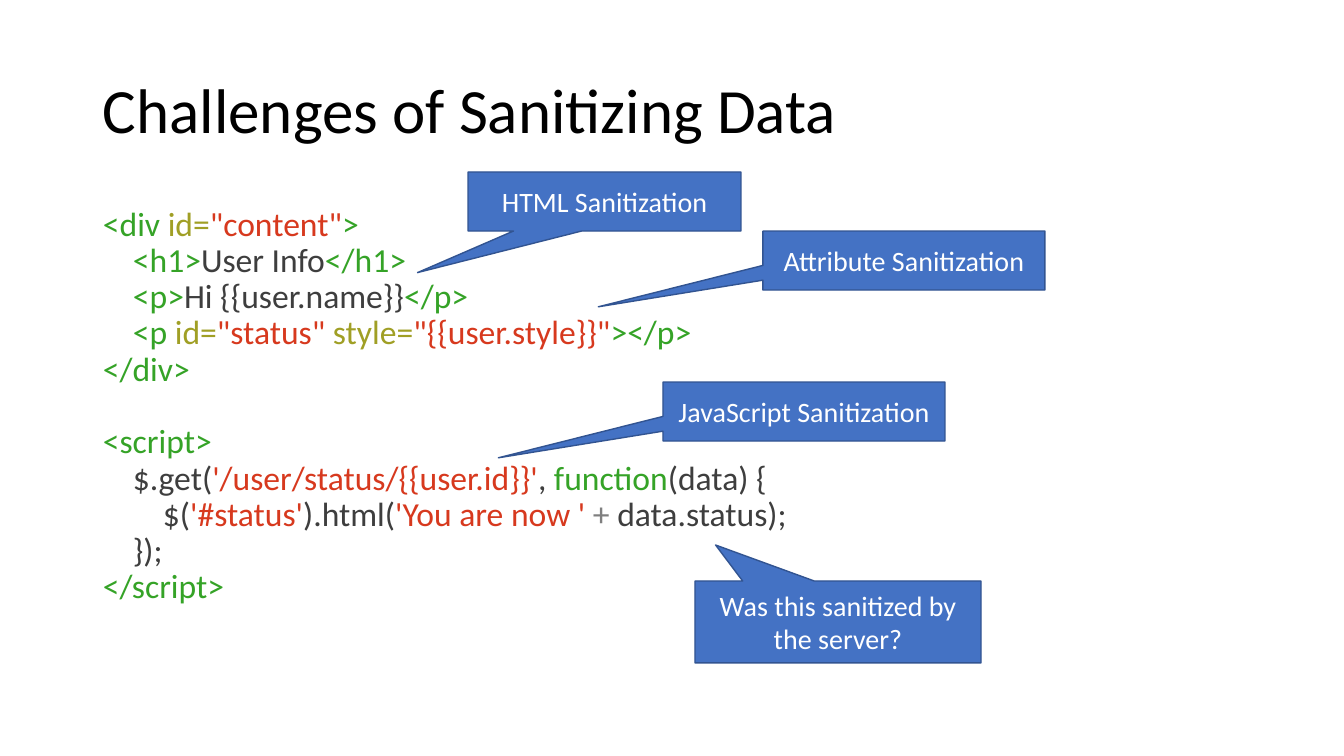
from pptx import Presentation
from pptx import util as u
from pptx.dml.color import RGBColor
from pptx.enum import shapes, text

PX = 914400 / 100.8
FONT = "Calibri"
BLACK, WHITE, BLUE, NAVY = "000000", "FFFFFF", "4472C4", "325491"
TAG, ATTR, STR, CODE, OP = "35A327", "A09F25", "D7391E", "3E3E3E", "7F7F7F"
INDENT = 30
LINE_GAP = 26

MARKUP = [
    (0, [("<div ", TAG), ("id=", ATTR), ('"content"', STR), (">", TAG)]),
    (1, [("<h1>", TAG), ("User Info", CODE), ("</h1>", TAG)]),
    (1, [("<p>", TAG), ("Hi {{user.name}}", CODE), ("</p>", TAG)]),
    (1, [("<p ", TAG), ("id=", ATTR), ('"status" ', STR), ("style=", ATTR),
         ('"{{user.style}}"', STR), ("></p>", TAG)]),
    (0, [("</div>", TAG)]),
]
SCRIPT = [
    (0, [("<script>", TAG)]),
    (1, [("$.get(", CODE), ("'/user/status/{{user.id}}'", STR), (", ", CODE),
         ("function", TAG), ("(data) {", CODE)]),
    (2, [("$(", CODE), ("'#status'", STR), (").html(", CODE),
         ("'You are now ' ", STR), ("+ ", OP), ("data.status);", CODE)]),
    (1, [("});", CODE)]),
    (0, [("</script>", TAG)]),
]
CALLOUTS = [
    ("HTML Sanitization", (468, 172, 273, 59), (-0.685, 1.205)),
    ("Attribute Sanitization", (763, 231, 282, 59), (-1.084, 0.785)),
    ("JavaScript Sanitization", (663, 382, 282, 59), (-1.084, 0.785)),
    ("Was this sanitized by the server?", (695, 581, 286, 82), (-0.428, -0.939)),
]


def px(n):
    """Turn pixels into EMU."""
    return u.Emu(round(n * PX))


def color(value):
    """Turn a hex string into a colour."""
    return RGBColor.from_string(value)


def add_run(p, words, size=24, fill=BLACK):
    """Add formatted text to a paragraph."""
    r = p.add_run()
    r.text = words
    r.font.name = FONT
    r.font.size = u.Pt(size)
    r.font.color.rgb = color(fill)


def add_box(s, box, anchor=text.MSO_ANCHOR.TOP):
    """Add a wrapping text box and return its text frame."""
    tf = s.shapes.add_textbox(*map(px, box)).text_frame
    tf.word_wrap = True
    tf.vertical_anchor = anchor
    return tf


def add_title(s, words, box):
    """Add the slide title."""
    p = add_box(s, box, text.MSO_ANCHOR.MIDDLE).paragraphs[0]
    p.line_spacing = 0.9
    add_run(p, words, size=45)


def add_code(s, blocks, box):
    """Add blocks of coloured code, one line apart."""
    tf = add_box(s, box)
    p = tf.paragraphs[0]
    for b, block in enumerate(blocks):
        for n, (depth, parts) in enumerate(block):
            if b or n:
                p = tf.add_paragraph()
            p.line_spacing = 0.9
            p.space_before = u.Pt(LINE_GAP if b and not n else 0)
            p._p.get_or_add_pPr().set("marL", str(px(depth * INDENT)))
            for words, fill in parts:
                add_run(p, words, fill=fill)


def add_callout(s, words, box, tip):
    """Add a rectangular callout whose tip is relative to its centre."""
    sp = s.shapes.add_shape(shapes.MSO_SHAPE.RECTANGULAR_CALLOUT, *map(px, box))
    sp.adjustments[0], sp.adjustments[1] = tip
    sp.shadow.inherit = False
    sp.fill.solid()
    sp.fill.fore_color.rgb = color(BLUE)
    sp.line.color.rgb = color(NAVY)
    sp.line.width = u.Pt(1)
    tf = sp.text_frame
    tf.word_wrap = True
    tf.vertical_anchor = text.MSO_ANCHOR.MIDDLE
    p = tf.paragraphs[0]
    p.alignment = text.PP_ALIGN.CENTER
    add_run(p, words, size=20, fill=WHITE)


def main():
    """Build and save the slide."""
    prs = Presentation()
    prs.slide_width, prs.slide_height = px(1344), px(756)
    s = prs.slides.add_slide(prs.slide_layouts[6])
    add_title(s, "Challenges of Sanitizing Data", (93, 40, 1159, 146))
    add_code(s, [MARKUP, SCRIPT], (93, 202, 1159, 480))
    for callout in CALLOUTS:
        add_callout(s, *callout)
    prs.save("out.pptx")


if __name__ == "__main__":
    main()
